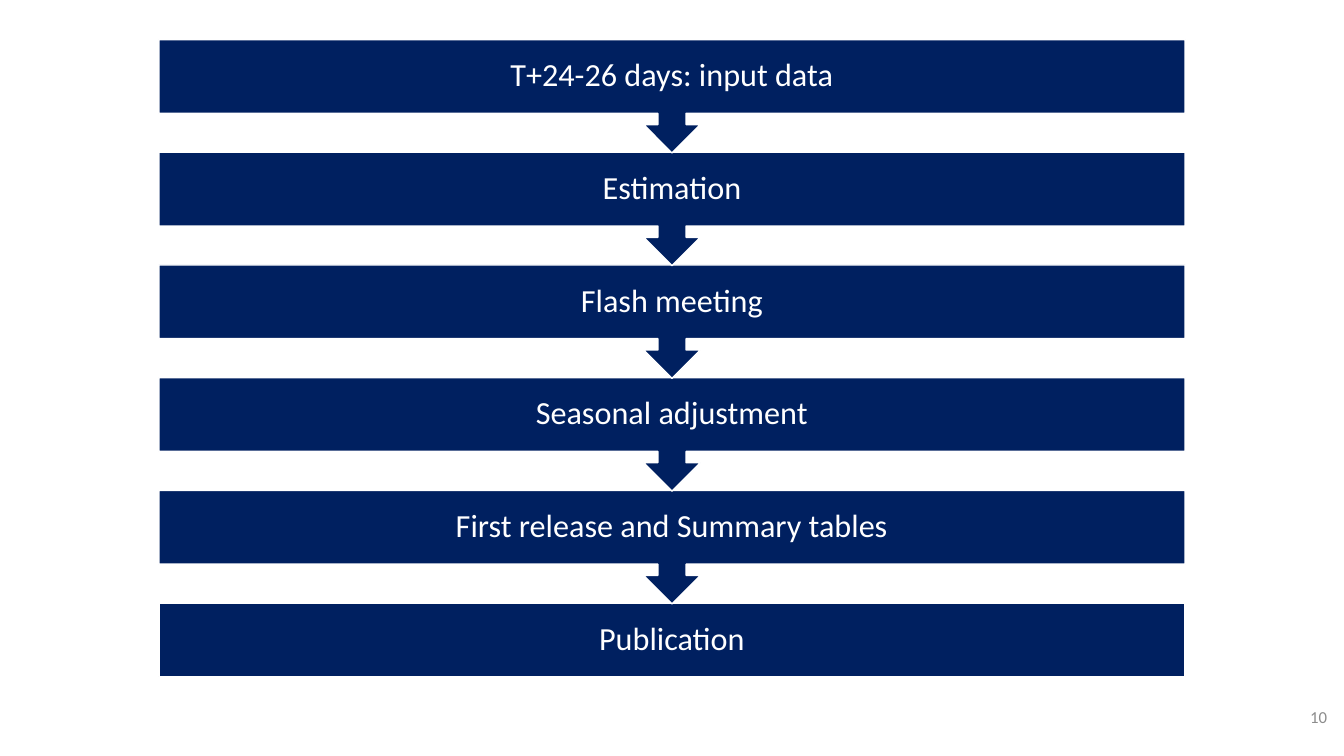
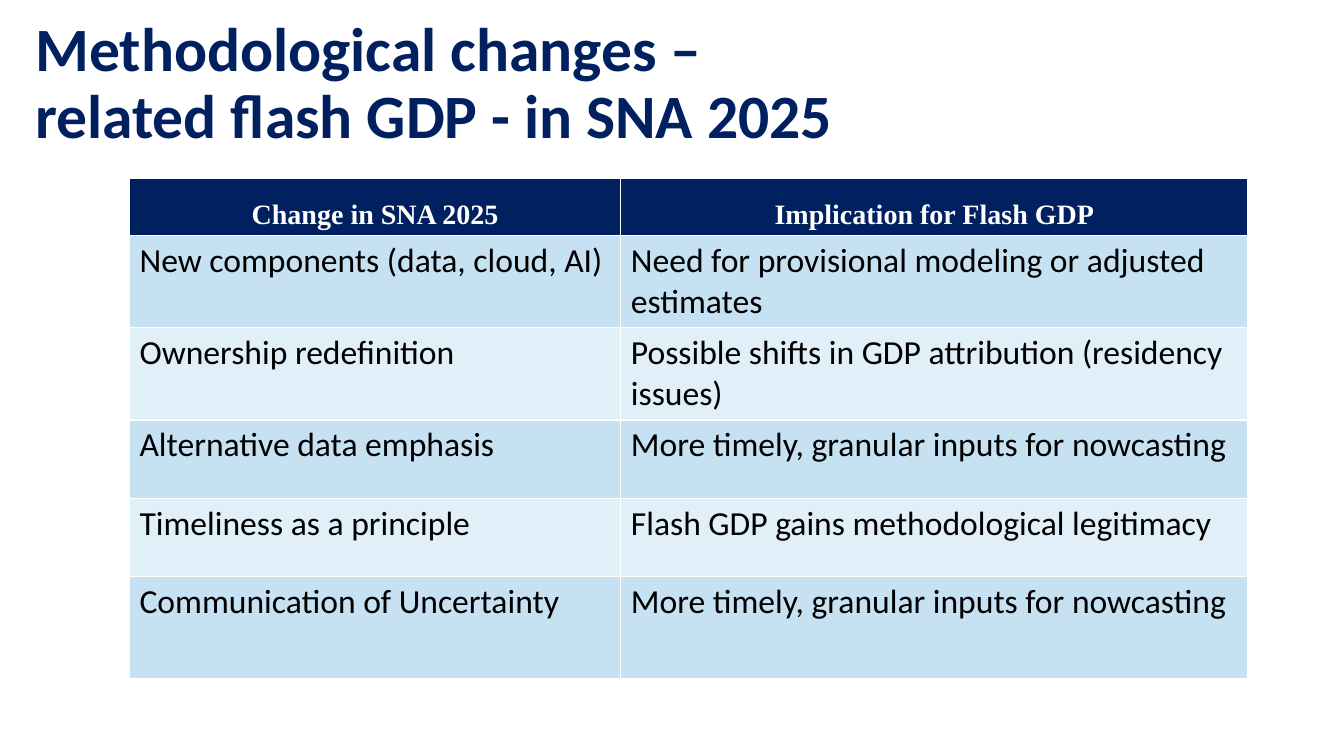
from lxml import etree
from pptx import Presentation
from pptx.dml.color import RGBColor
from pptx.enum.shapes import MSO_SHAPE
from pptx.enum.text import MSO_ANCHOR, MSO_AUTO_SIZE, PP_ALIGN
from pptx.oxml.ns import qn
from pptx.util import Pt

COLORS = {
    "navy": "002060",
    "white": "FFFFFF",
    "black": "000000",
    "gray": "8C8C8C",
    "band_dark": "C6E1F2",
    "band_light": "E0EFF8",
}
BLANK, TITLE_ONLY = 6, 5
STEPS = [
    "T+24-26 days: input data",
    "Estimation",
    "Flash meeting",
    "Seasonal adjustment",
    "First release and Summary tables",
    "Publication",
]
CHANGES = [
    ("Change in SNA 2025", "Implication for Flash GDP"),
    ("New components (data, cloud, AI)",
     "Need for provisional modeling or adjusted estimates"),
    ("Ownership redefinition",
     "Possible shifts in GDP attribution (residency issues)"),
    ("Alternative data emphasis",
     "More timely, granular inputs for nowcasting"),
    ("Timeliness as a principle",
     "Flash GDP gains methodological legitimacy"),
    ("Communication of Uncertainty",
     "More timely, granular inputs for nowcasting"),
]


def rgb(name):
    return RGBColor.from_string(COLORS[name])


def write(tf, lines, size, color="black", font="Calibri", bold=False,
          align=PP_ALIGN.LEFT, spacing=1.0, anchor=None):
    """Fill a text frame with one formatted paragraph per line."""
    tf.word_wrap = True
    if anchor is not None:
        tf.vertical_anchor = anchor
    for i, line in enumerate(lines):
        p = tf.add_paragraph() if i else tf.paragraphs[0]
        p.alignment = align
        p.line_spacing = spacing
        p.space_before = p.space_after = Pt(0)
        r = p.add_run()
        r.text = line
        r.font.name = font
        r.font.size = Pt(size)
        r.font.bold = bold
        r.font.color.rgb = rgb(color)


def set_borders(cell, color, width):
    tc_pr = cell._tc.get_or_add_tcPr()
    for i, side in enumerate(("lnL", "lnR", "lnT", "lnB")):
        ln = etree.Element(qn(f"a:{side}"), w=str(Pt(width)))
        fill = etree.SubElement(ln, qn("a:solidFill"))
        etree.SubElement(fill, qn("a:srgbClr"), val=COLORS[color])
        tc_pr.insert(i, ln)


class Deck:
    def __init__(self):
        self.prs = Presentation()
        self.prs.slide_width, self.prs.slide_height = Pt(960), Pt(540)
        self.s = None

    def slide(self, layout):
        self.s = self.prs.slides.add_slide(self.prs.slide_layouts[layout])

    def title(self, lines, x, y, w, h):
        sp = self.s.shapes.title
        sp.left, sp.top, sp.width, sp.height = Pt(x), Pt(y), Pt(w), Pt(h)
        sp.text_frame.auto_size = MSO_AUTO_SIZE.NONE
        write(sp.text_frame, lines, 44, "navy", bold=True, spacing=0.9,
              anchor=MSO_ANCHOR.TOP)

    def step(self, text, kind, x, y, w, h):
        sp = self.s.shapes.add_shape(kind, Pt(x), Pt(y), Pt(w), Pt(h))
        sp.shadow.inherit = False
        sp.fill.solid()
        sp.fill.fore_color.rgb = rgb("navy")
        sp.line.color.rgb = rgb("white")
        sp.line.width = Pt(1)
        write(sp.text_frame, [text], 23, "white", align=PP_ALIGN.CENTER,
              spacing=0.9, anchor=MSO_ANCHOR.MIDDLE)

    def flow(self, steps, x, y, w, box_h, pitch):
        """Stack steps downwards; all but the last point to the next one."""
        last = len(steps) - 1
        for i in range(last, -1, -1):
            if i == last:
                kind, h = MSO_SHAPE.RECTANGLE, box_h
            else:
                kind, h = MSO_SHAPE.DOWN_ARROW_CALLOUT, pitch + 0.5
            self.step(steps[i], kind, x, y + i * pitch, w, h)

    def page_number(self, number):
        sp = self.s.shapes.add_textbox(Pt(739), Pt(497.5), Pt(216), Pt(29))
        write(sp.text_frame, [str(number)], 12, "gray",
              align=PP_ALIGN.RIGHT, anchor=MSO_ANCHOR.MIDDLE)

    def table(self, rows, x, y, widths, heights):
        table = self.s.shapes.add_table(
            len(rows), len(widths), Pt(x), Pt(y),
            Pt(sum(widths)), Pt(sum(heights))).table
        for column, width in zip(table.columns, widths):
            column.width = Pt(width)
        for i, (row, height) in enumerate(zip(rows, heights)):
            table.rows[i].height = Pt(height)
            for j, text in enumerate(row):
                self.cell(table.cell(i, j), text, i)

    def cell(self, cell, text, row):
        cell.fill.solid()
        if row == 0:
            fill = "navy"
            write(cell.text_frame, [text], 20, "white", "Times New Roman",
                  bold=True, align=PP_ALIGN.CENTER, spacing=1.5)
        else:
            fill = "band_dark" if row % 2 else "band_light"
            write(cell.text_frame, [text], 24)
        cell.fill.fore_color.rgb = rgb(fill)
        set_borders(cell, "white", 1)


def main():
    deck = Deck()

    deck.slide(BLANK)
    deck.flow(STEPS, x=113.5, y=28.3, w=733, box_h=52.5, pitch=80.5)
    deck.page_number(10)

    deck.slide(TITLE_ONLY)
    deck.table(CHANGES, x=92.5, y=127.5, widths=(351, 448),
               heights=(40, 66, 66, 56, 56, 73))
    deck.title(["Methodological changes –", "related flash GDP - in SNA 2025"],
               x=18, y=9.5, w=672.5, h=103)

    deck.prs.save("out.pptx")


if __name__ == "__main__":
    main()
